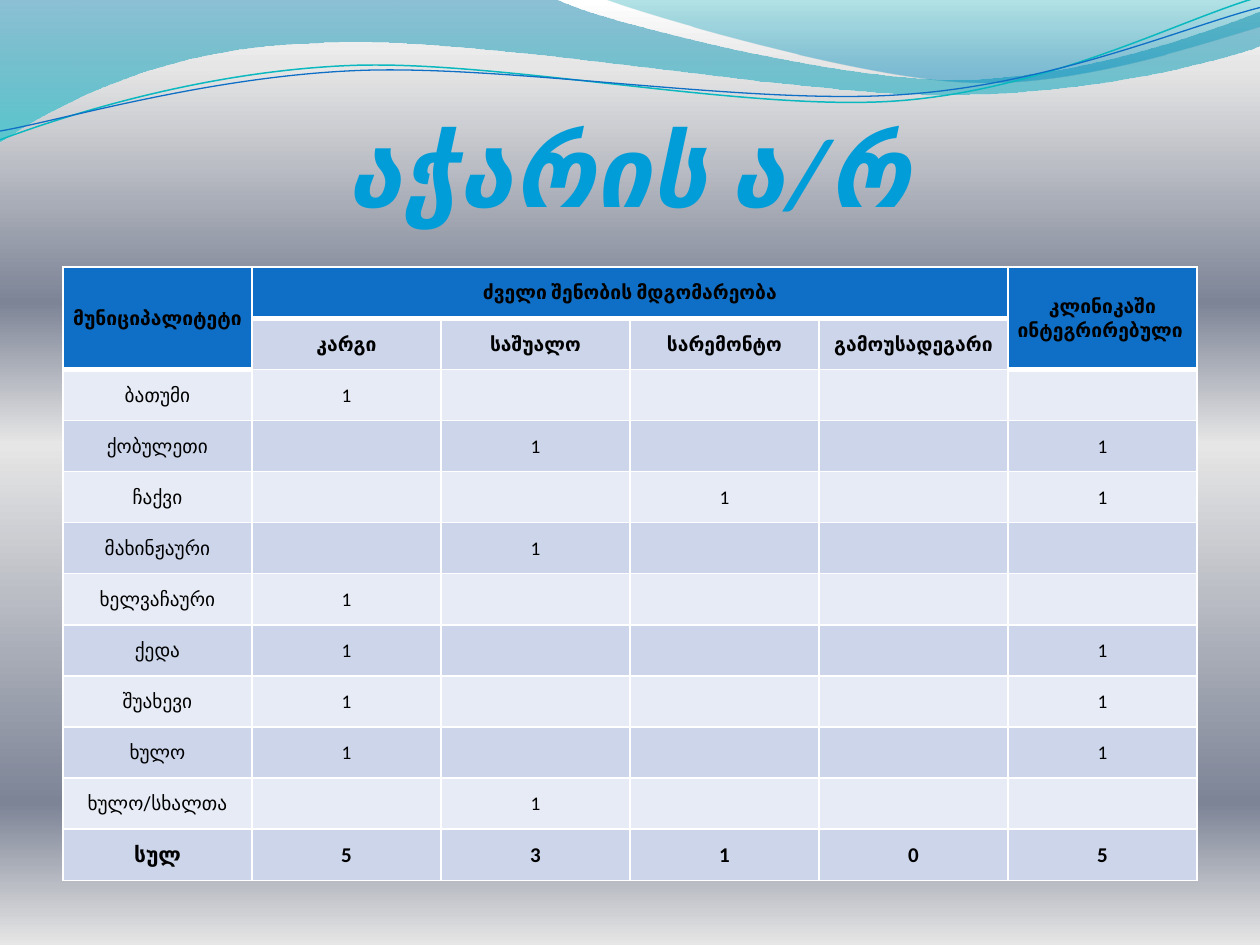
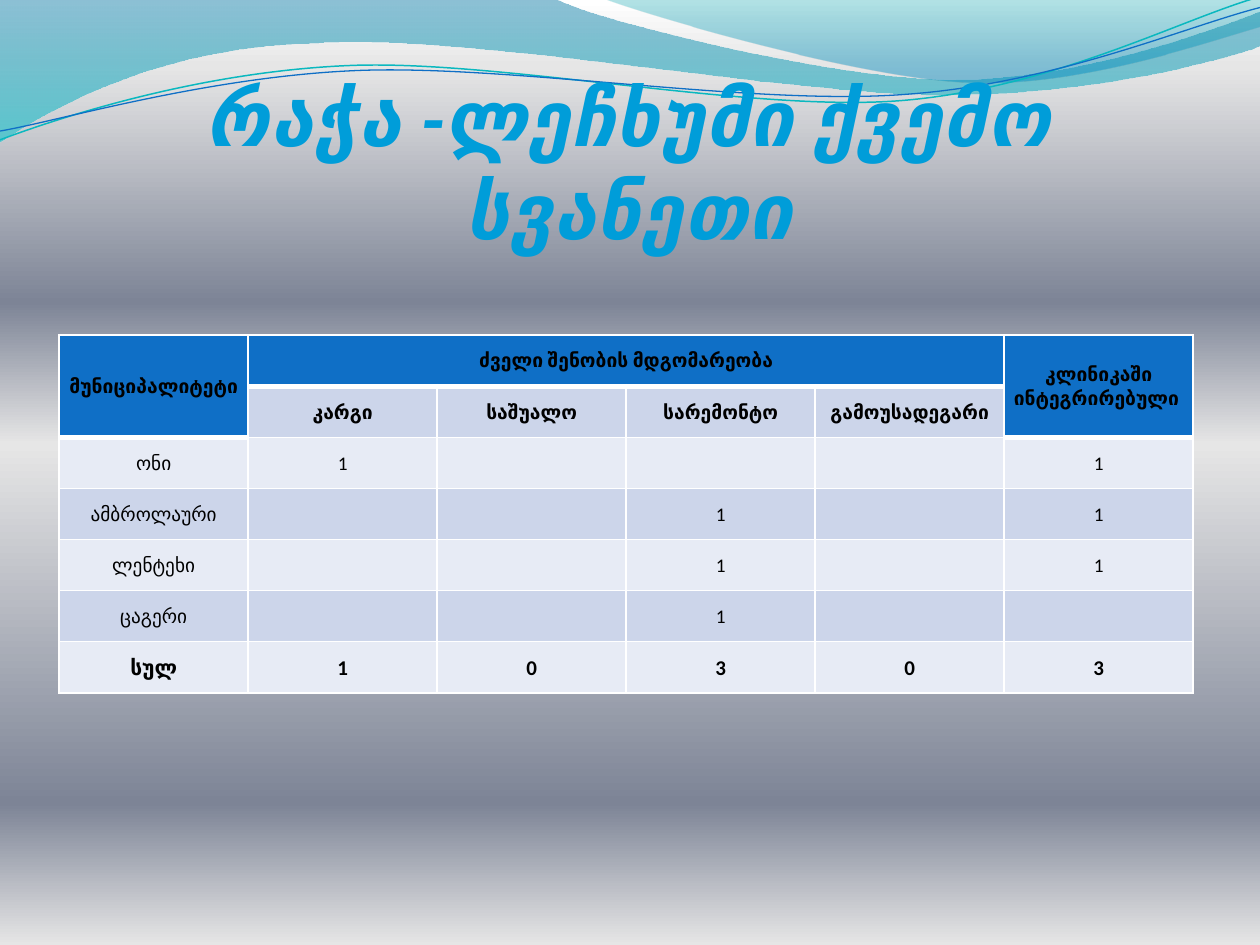
from math import cos, radians, sin

from lxml.etree import SubElement
from pptx import Presentation
from pptx.dml.color import RGBColor
from pptx.enum.text import MSO_ANCHOR, MSO_AUTO_SIZE, PP_ALIGN
from pptx.oxml import parse_xml
from pptx.oxml.ns import nsdecls, qn
from pptx.util import Inches, Pt

COLORS = {
    "header": "0F6FC6", "band_dark": "CCD5EA", "band_light": "E7EBF5",
    "border": "FFFFFF", "text": "000000", "teal_line": "0AB8BF", "blue_line": "0F6FC6",
}
# Gradient stops: position %, colour, opacity %
GRADIENTS = {
    "background": [(0, "FFFFFF", 100), (7, "E6E6E6", 100), (32, "7D8496", 100),
                   (47, "E6E6E6", 100), (85, "7D8496", 100), (100, "E6E6E6", 100)],
    "title": [(25, "009DD9", 100), (100, "006F99", 100)],
    "wide_wave": [(0, "0074A1", 45), (100, "00C6CF", 55)],
    "right_wave": [(0, "00A1A9", 30), (80, "008BBF", 45)],
}
# Wave outlines: a 2-number step is a straight line, a 6-number step a Bezier curve
WIDE_WAVE = [(0, 0), (4.4, -0.01), (4.76, 0.17, 6.64, 0.63, 7.58, 0.63),
             (8.53, 0.63, 9.58, 0.26, 10, 0.09), (10.01, 0.36),
             (9.83, 0.44, 8.7, 0.76, 7.46, 0.75), (6.22, 0.75, 3.82, 0.28, 2.57, 0.34),
             (1.29, 0.36, 0.46, 0.83, -0.01, 1.13), (0, 0)]
RIGHT_WAVE = [(4.79, -0.01), (5.09, 0.11, 6.82, 0.62, 7.69, 0.65),
              (8.56, 0.69, 9.61, 0.32, 10, 0.21), (10, 0), (4.79, -0.01)]
TEAL_LINE = [(0, 1.11), (0.48, 0.93, 1.58, 0.57, 2.77, 0.52),
             (3.95, 0.47, 5.93, 0.89, 7.13, 0.8), (8.33, 0.71, 9.38, 0.15, 9.98, -0.02)]
BLUE_LINE = [(0, 1.04), (0.47, 0.96, 1.64, 0.61, 2.83, 0.56),
             (4.03, 0.51, 5.97, 0.84, 7.17, 0.75), (8.36, 0.67, 9.41, 0.21, 10, 0.06)]
LINE_TILT = -2.7

CONDITIONS = ["კარგი", "საშუალო", "სარემონტო", "გამოუსადეგარი"]
HEADER = ["მუნიციპალიტეტი", "ძველი შენობის მდგომარეობა", "", "", "", "კლინიკაში ინტეგრირებული "]
LAST = len(HEADER) - 1
ROW_H = Pt(29.2)

# Municipality, building condition (index in CONDITIONS), integrated into a clinic
ADJARA = [("ბათუმი", 0, False), ("ქობულეთი", 1, True), ("ჩაქვი", 2, True),
          ("მახინჟაური", 1, False), ("ხელვაჩაური", 0, False), ("ქედა", 0, True),
          ("შუახევი", 0, True), ("ხულო", 0, True), ("ხულო/სხალთა", 1, False)]
RACHA = [("ონი", 0, True), ("ამბროლაური", 2, True), ("ლენტეხი", 2, True),
         ("ცაგერი", 2, False)]


def rgb(name):
    return RGBColor.from_string(COLORS[name])


def set_gradient(parent, name):
    """Swap the solid fill inside parent for a vertical gradient."""
    stops = "".join(
        f'<a:gs pos="{pos * 1000}"><a:srgbClr val="{color}">'
        f'<a:alpha val="{opacity * 1000}"/></a:srgbClr></a:gs>'
        for pos, color, opacity in GRADIENTS[name])
    grad = parse_xml(f'<a:gradFill {nsdecls("a")} rotWithShape="1"><a:gsLst>{stops}</a:gsLst>'
                     '<a:lin ang="5400000" scaled="0"/></a:gradFill>')
    parent.replace(parent.find(qn("a:solidFill")), grad)


def untilt(points, tilt, center=(4.99, 0.57)):
    """Turn points back about center, so that rotating the shape restores them."""
    cx, cy = center
    c, s = cos(radians(-tilt)), sin(radians(-tilt))
    return [(cx + (x - cx) * c - (y - cy) * s, cy + (x - cx) * s + (y - cy) * c)
            for x, y in points]


def draw_outline(s, steps, tilt, close):
    """Build the outline through all points, then join curve triples into Beziers."""
    points = [step[i:i + 2] for step in steps for i in range(0, len(step), 2)]
    points = [(Inches(x), Inches(y)) for x, y in untilt(points, tilt)]
    builder = s.shapes.build_freeform(*points[0])
    builder.add_line_segments(points[1:], close=close)
    sp = builder.convert_to_shape()
    sp.rotation = tilt
    segments = iter(list(sp.element.iter(qn("a:lnTo"))))
    for step in steps[1:]:
        first = next(segments)
        if len(step) == 6:
            first.tag = qn("a:cubicBezTo")
            for segment in (next(segments), next(segments)):
                first.append(segment[0])
                segment.getparent().remove(segment)
    return sp


def add_wave(s, steps, gradient=None, line=None, width=0, tilt=0):
    sp = draw_outline(s, steps, tilt, close=gradient is not None)
    sp.shadow.inherit = False
    if gradient:
        sp.fill.solid()
        set_gradient(sp.element.spPr, gradient)
        sp.line.fill.background()
    else:
        sp.fill.background()
        sp.line.color.rgb = rgb(line)
        sp.line.width = Pt(width)
    return sp


def decorate_layout(layout, s):
    """Give the layout its background and waves, drawn on s and moved over."""
    layout.background.fill.solid()
    set_gradient(layout.element.find(".//" + qn("p:bgPr")), "background")
    waves = [add_wave(s, WIDE_WAVE, gradient="wide_wave"),
             add_wave(s, RIGHT_WAVE, gradient="right_wave"),
             add_wave(s, TEAL_LINE, line="teal_line", width=0.85, tilt=LINE_TILT),
             add_wave(s, BLUE_LINE, line="blue_line", width=0.75, tilt=LINE_TILT)]
    tree = layout.shapes.element
    for i, sp in enumerate(waves):
        sp.element.nvSpPr.cNvPr.set("id", str(100 + i))
        tree.insert(2 + i, sp.element)


def add_title(s, text, size, box):
    sp = s.shapes.title
    sp.left, sp.top, sp.width, sp.height = (Inches(v) for v in box)
    tf = sp.text_frame
    tf.word_wrap = True
    tf.auto_size = MSO_AUTO_SIZE.NONE
    tf.vertical_anchor = MSO_ANCHOR.BOTTOM
    tf.margin_left = tf.margin_right = tf.margin_bottom = 0
    tf.margin_top = Inches(0.05)
    p = tf.paragraphs[0]
    p.alignment = PP_ALIGN.CENTER
    r = p.add_run()
    r.text = text
    r.font.name, r.font.size = "Calibri", Pt(size)
    r.font.bold = r.font.italic = True
    r.font.fill.solid()
    rPr = r._r.get_or_add_rPr()
    rPr.set("spc", "50")
    set_gradient(rPr, "title")


def is_header(row, col):
    return row == 0 or (row == 1 and col in (0, LAST))


def set_borders(cell, row, col):
    """White rules, thicker under the header cells."""
    top = 3 if row and is_header(row - 1, col) else 1
    bottom = 3 if is_header(row, col) else 1
    tcPr = cell._tc.get_or_add_tcPr()
    for side, width in (("L", 1), ("R", 1), ("T", top), ("B", bottom)):
        ln = SubElement(tcPr, qn(f"a:ln{side}"), w=str(Pt(width)))
        fill = SubElement(ln, qn("a:solidFill"))
        SubElement(fill, qn("a:srgbClr"), val=COLORS["border"])


def fill_cell(cell, text, row, col, total):
    set_borders(cell, row, col)
    band = "band_dark" if row % 2 else "band_light"
    cell.fill.solid()
    cell.fill.fore_color.rgb = rgb("header" if is_header(row, col) else band)
    cell.vertical_anchor = MSO_ANCHOR.MIDDLE
    cell.margin_left = cell.margin_right = cell.margin_top = Inches(0.01)
    cell.margin_bottom = 0
    if not text:
        return
    p = cell.text_frame.paragraphs[0]
    p.alignment = PP_ALIGN.CENTER
    r = p.add_run()
    r.text = text
    r.font.name = "Calibri" if col else "Roboto"
    r.font.size = Pt(12 if total else 11)
    r.font.bold = total or row < 2
    r.font.color.rgb = rgb("text")


def add_condition_table(s, records, left, top, width=9):
    # Marks per municipality, then the column sums
    marks = [[int(i == state) for i in range(len(CONDITIONS))] + [int(joined)]
             for _, state, joined in records]
    rows = [HEADER, ["", *CONDITIONS, ""]]
    rows += [[name, *("1" if m else "" for m in line)]
             for (name, _, _), line in zip(records, marks)]
    rows.append(["სულ", *(str(sum(column)) for column in zip(*marks))])

    frame = s.shapes.add_table(len(rows), len(HEADER), Inches(left), Inches(top),
                               Inches(width), ROW_H * len(rows))
    table = frame.table
    table.first_row = table.horz_banding = False
    for column in table.columns:
        column.width = Inches(width / len(HEADER))
    for i, line in enumerate(rows):
        table.rows[i].height = ROW_H
        for j, text in enumerate(line):
            fill_cell(table.cell(i, j), text, i, j, total=i == len(rows) - 1)
    for start, end in (((0, 0), (1, 0)), ((0, 1), (0, LAST - 1)), ((0, LAST), (1, LAST))):
        table.cell(*start).merge(table.cell(*end))


def main():
    prs = Presentation()
    prs.slide_width, prs.slide_height = Inches(10), Inches(7.5)
    layout = prs.slide_layouts[5]

    # Adjara
    s = prs.slides.add_slide(layout)
    decorate_layout(layout, s)
    add_title(s, "აჭარის ა/რ", 56, (0.5, 0.77, 9, 1.03))
    add_condition_table(s, ADJARA, 0.5, 2.12)

    # Racha-Lechkhumi and Lower Svaneti
    s = prs.slides.add_slide(layout)
    add_title(s, "რაჭა -ლეჩხუმი ქვემო სვანეთი", 44, (0.5, 0.77, 9, 1.25))
    add_condition_table(s, RACHA, 0.47, 2.66)

    prs.save("out.pptx")


if __name__ == "__main__":
    main()
